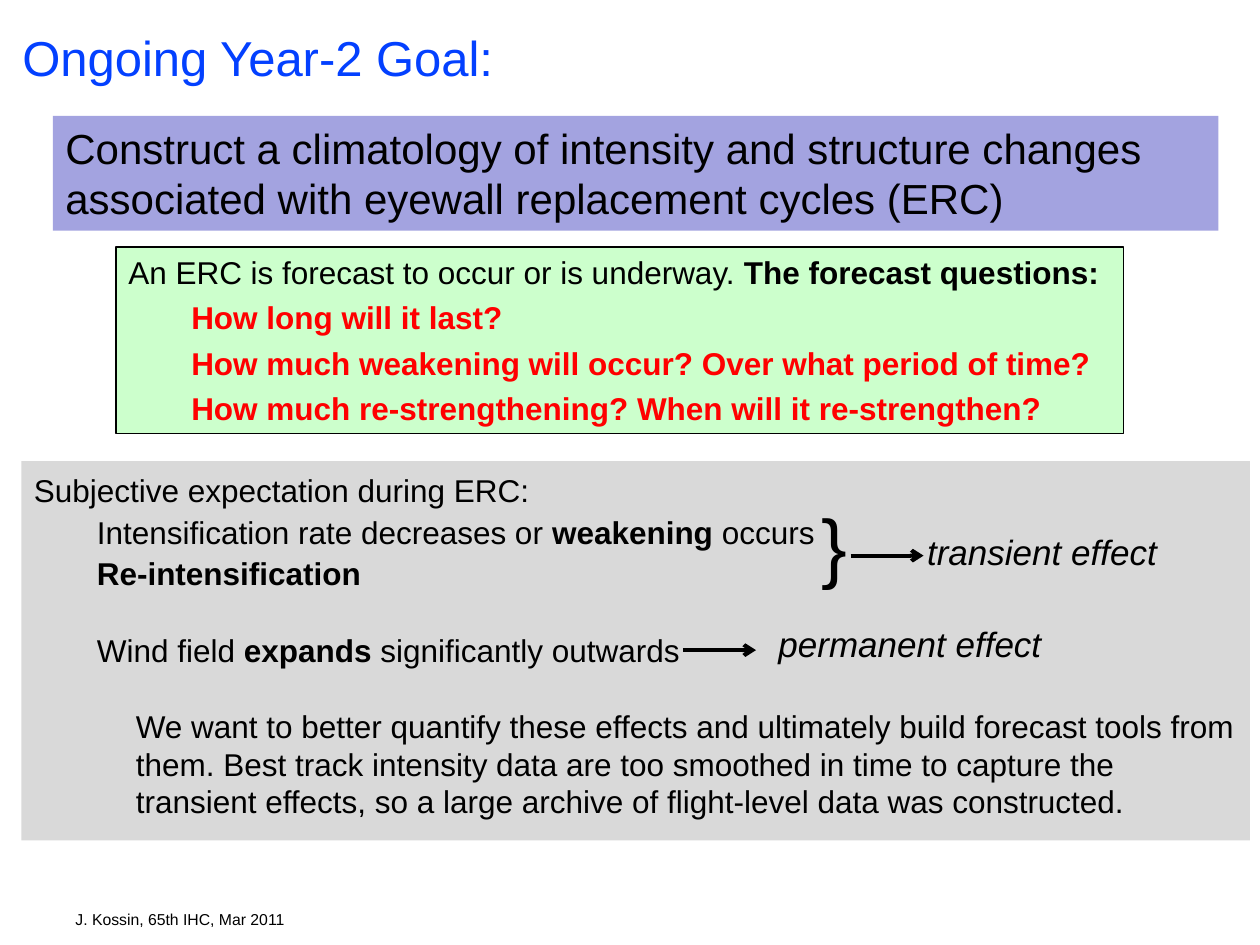
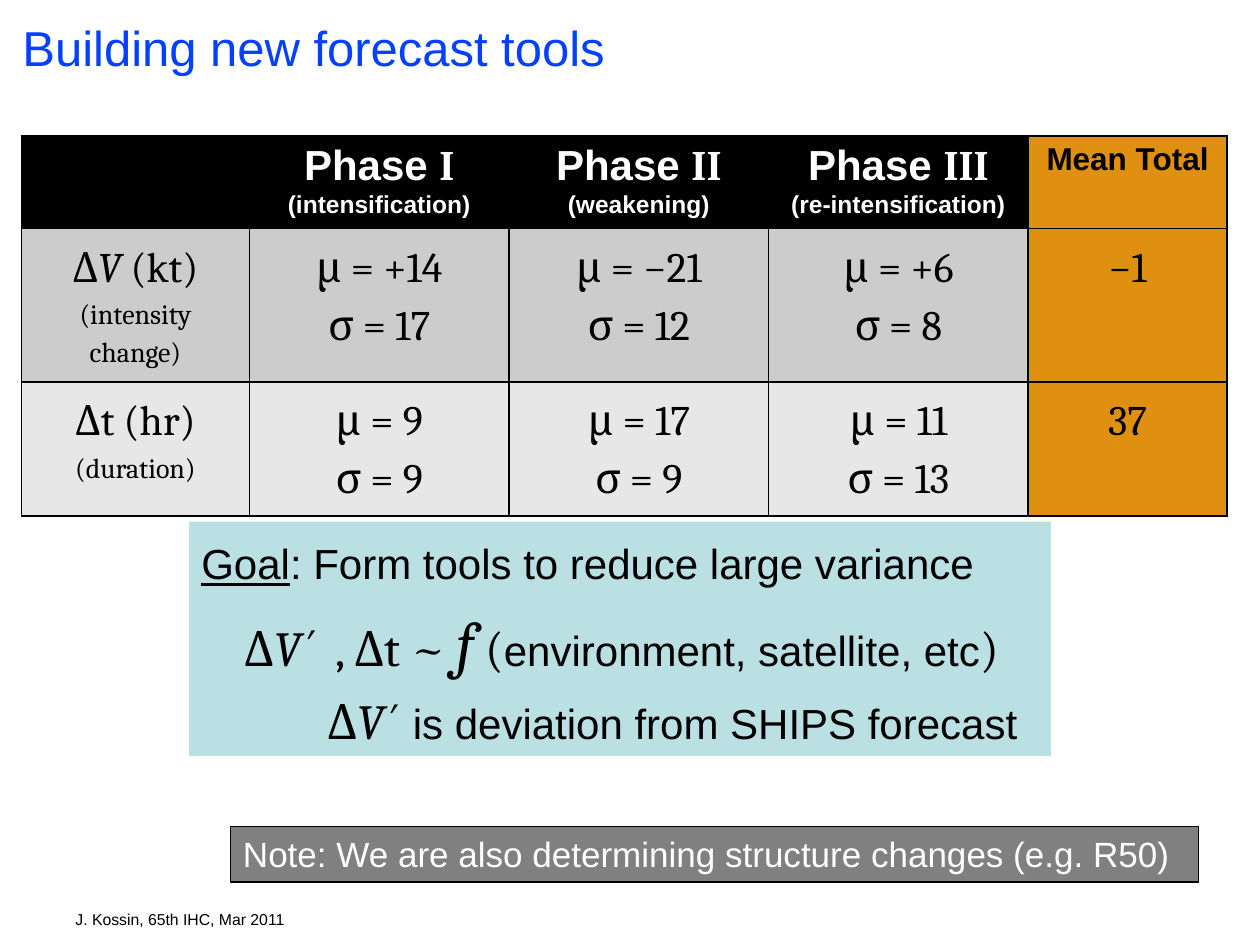
from dataclasses import dataclass

from lxml import etree
from pptx import Presentation
from pptx.dml.color import RGBColor
from pptx.enum.shapes import MSO_CONNECTOR, MSO_SHAPE
from pptx.enum.text import MSO_ANCHOR, PP_ALIGN
from pptx.oxml.ns import qn
from pptx.util import Inches, Pt

RECTANGLE = MSO_SHAPE.RECTANGLE
STRAIGHT = MSO_CONNECTOR.STRAIGHT
LEFT, CENTER = PP_ALIGN.LEFT, PP_ALIGN.CENTER
TOP = MSO_ANCHOR.TOP

BLACK, WHITE, RED = "000000", "FFFFFF", "FF0000"
TITLE_BLUE, LAVENDER, GREEN = "0340FF", "A3A3E0", "CCFFCC"
PALE_BLUE, ORANGE = "BBE0E3", "E09010"
LIGHT_GRAY, DARK_GRAY = "D9D9D9", "808080"
ROW_GRAYS = ("CCCCCC", "E7E7E7")
SANS, SERIF, MONO = "Arial", "Cambria", "Courier New"
FOOTER = "J. Kossin, 65th IHC, Mar 2011"


def rgb(color):
    return RGBColor.from_string(color)


@dataclass
class Run:
    text: str
    size: int = 18
    font: str = SANS
    color: str = BLACK
    bold: bool = False
    italic: bool = False
    underline: bool = False
    raised: bool = False


@dataclass
class Line:
    """One paragraph: its runs, left indent in inches and spacing."""
    runs: list
    indent: float = 0
    spacing: float = 1
    before: int = 0
    align: PP_ALIGN = LEFT


class Deck:
    """Holds the shared style and the slide being built."""

    def __init__(self):
        self.presentation = Presentation()
        self.presentation.slide_width = Inches(10)
        self.presentation.slide_height = Inches(7.5)
        self.slide = None

    def new_slide(self, title, title_top):
        layout = self.presentation.slide_layouts[6]
        self.slide = self.presentation.slides.add_slide(layout)
        self.text(0.5, 7.17, 1.95, 0.25, Run(FOOTER, 9))
        self.text(0.08, title_top, 9.83, 0.57, Run(title, 28, color=TITLE_BLUE))

    def add_lines(self, text_frame, lines):
        text_frame.word_wrap = True
        text_frame.vertical_anchor = TOP
        for index, line in enumerate(lines):
            paragraph = text_frame.add_paragraph() if index else text_frame.paragraphs[0]
            properties = paragraph._p.get_or_add_pPr()
            properties.set("marL", str(Inches(line.indent)))
            properties.set("indent", "0")
            paragraph.alignment = line.align
            paragraph.line_spacing = line.spacing
            paragraph.space_before = Pt(line.before)
            for item in line.runs:
                self.add_run(paragraph, item)

    def add_run(self, paragraph, item):
        run = paragraph.add_run()
        run.text = item.text
        font = run.font
        font.name, font.size = item.font, Pt(item.size)
        font.bold, font.italic = item.bold, item.italic
        font.underline = item.underline
        font.color.rgb = rgb(item.color)
        if item.raised:
            run._r.get_or_add_rPr().set("baseline", "30000")

    def text(self, left, top, width, height, run):
        shape = self.slide.shapes.add_textbox(
            Inches(left), Inches(top), Inches(width), Inches(height))
        self.add_lines(shape.text_frame, [Line([run])])

    def panel(self, left, top, width, height, fill, lines, outline=None):
        shape = self.slide.shapes.add_shape(
            RECTANGLE, Inches(left), Inches(top), Inches(width), Inches(height))
        shape.shadow.inherit = False
        shape.fill.solid()
        shape.fill.fore_color.rgb = rgb(fill)
        if outline:
            shape.line.color.rgb = rgb(outline)
            shape.line.width = Pt(0.75)
        else:
            shape.line.fill.background()
        self.add_lines(shape.text_frame, lines)

    def arrow(self, left, top, length):
        connector = self.slide.shapes.add_connector(
            STRAIGHT, Inches(left), Inches(top), Inches(left + length), Inches(top))
        connector.line.color.rgb = rgb(BLACK)
        connector.line.width = Pt(2.25)
        etree.SubElement(connector.line._get_or_add_ln(), qn("a:tailEnd"), type="arrow")
        etree.SubElement(connector._element.spPr, qn("a:effectLst"))

    def table(self, left, top, widths, heights, rows, fills):
        frame = self.slide.shapes.add_table(
            len(heights), len(widths), Inches(left), Inches(top),
            Inches(sum(widths)), Inches(sum(heights)))
        table = frame.table
        table.first_row = table.horz_banding = False
        for column, width in zip(table.columns, widths):
            column.width = Inches(width)
        for table_row, height, lines_by_cell, row_fills in zip(table.rows, heights, rows, fills):
            table_row.height = Inches(height)
            for cell, lines, fill in zip(table_row.cells, lines_by_cell, row_fills):
                self.add_lines(cell.text_frame, lines)
                self.add_borders(cell)
                cell.fill.solid()
                cell.fill.fore_color.rgb = rgb(fill)

    def add_borders(self, cell):
        properties = cell._tc.get_or_add_tcPr()
        for side in ("a:lnL", "a:lnR", "a:lnT", "a:lnB"):
            border = etree.SubElement(properties, qn(side), w=str(Pt(1)))
            fill = etree.SubElement(border, qn("a:solidFill"))
            etree.SubElement(fill, qn("a:srgbClr"), val=BLACK)


def header_cell(numeral, meaning):
    phase = [Run("Phase ", 24, color=WHITE, bold=True),
             Run(numeral, 24, SERIF, WHITE, bold=True)]
    note = [Run(f"({meaning})", 14, color=WHITE, bold=True)]
    return [Line(phase, align=CENTER), Line(note, align=CENTER)]


def value_line(*runs):
    return Line(list(runs), spacing=1.2, align=CENTER)


def serif(text, size=24, **style):
    return Run(text, size, SERIF, **style)


def statistics_cell(mean, deviation):
    return [value_line(serif(f"μ = {mean}")), value_line(serif(f"σ = {deviation}"))]


def build_goal_slide(deck):
    deck.new_slide("Ongoing Year-2 Goal:", 0.17)

    questions = ("How long will it last?",
                 "How much weakening will occur? Over what period of time?",
                 "How much re-strengthening? When will it re-strengthen?")
    lines = [Line([Run("An ERC is forecast to occur or is underway. "),
                   Run("The forecast questions:", bold=True)])]
    lines += [Line([Run(question, color=RED, bold=True)], 0.5, 1.2) for question in questions]
    deck.panel(0.92, 1.96, 8, 1.48, GREEN, lines, BLACK)

    goal = ("Construct a climatology of intensity and structure changes "
            "associated with eyewall replacement cycles (ERC)")
    deck.panel(0.42, 0.92, 9.25, 0.91, LAVENDER, [Line([Run(goal, 24)])])

    plan = ("We want to better quantify these effects and ultimately build forecast "
            "tools from them. Best track intensity data are too smoothed in time to "
            "capture the transient effects, so a large archive of flight-level data "
            "was constructed.")
    deck.panel(0.17, 3.66, 9.75, 3.01, LIGHT_GRAY, [
        Line([Run("Subjective expectation during ERC:")], spacing=1.1),
        Line([Run("Intensification rate decreases or "), Run("weakening ", bold=True),
              Run("occurs")], 0.5, 1.1),
        Line([Run("Re-intensification", bold=True)], 0.5, 1.1),
        Line([Run("Wind field "), Run("expands", bold=True),
              Run(" significantly outwards")], 0.5, before=22),
        Line([Run(plan)], 0.81, before=22),
    ])
    deck.text(7.26, 4.16, 2.07, 0.44, Run("transient effect", 20, italic=True))
    deck.text(6.42, 3.9, 0.41, 0.84, Run("}", 44))
    deck.text(6.08, 4.89, 2.33, 0.44, Run("permanent effect", 20, italic=True))
    for left, top in ((6.75, 4.41), (5.42, 5.16)):
        deck.arrow(left, top, 0.58)


def build_tools_slide(deck):
    deck.new_slide("Building new forecast tools", 0.09)

    delta_v = [serif("Δ", 28), serif("V", 28, italic=True),
               Run("’", 28, MONO, italic=True, raised=True)]
    deck.panel(1.5, 4.14, 6.84, 1.86, PALE_BLUE, [
        Line([Run("Goal", 24, underline=True),
              Run(": Form tools to reduce large variance", 24)], spacing=1.2),
        Line([*delta_v, Run(" ", 28, MONO, italic=True, raised=True),
              serif(", Δt ~ ", 28), serif("f", 36, italic=True), serif(" (", 28),
              Run("environment, satellite, etc", 24), serif(")", 28)], 0.34, 1.2),
        Line([*delta_v, Run(" is deviation from SHIPS forecast", 24)], 1, 1.2),
    ])

    header = [[], header_cell("I", "intensification"), header_cell("II", "weakening"),
              header_cell("III", "re-intensification"),
              [Line([Run("Mean Total", bold=True)], align=CENTER)]]
    intensity = [
        [value_line(serif("Δ"), serif("V", italic=True), serif(" (kt)")),
         value_line(serif("(intensity change)", 16))],
        statistics_cell("+14", 17), statistics_cell("−21", 12), statistics_cell("+6", 8),
        [value_line(serif("−1"))]]
    duration = [
        [value_line(serif("Δt (hr)")), value_line(serif("(duration)", 16))],
        statistics_cell(9, 9), statistics_cell(17, 9), statistics_cell(11, 13),
        [value_line(serif("37"))]]
    fills = [[color] * 4 + [ORANGE] for color in (BLACK, *ROW_GRAYS)]
    deck.table(0.17, 1.08, [1.81, 2.06, 2.06, 2.06, 1.58], [0.73, 1.22, 1.06],
               [header, intensity, duration], fills)

    note = "Note: We are also determining structure changes (e.g. R50)"
    deck.panel(1.83, 6.56, 7.68, 0.44, DARK_GRAY, [Line([Run(note, 20, color=WHITE)])], BLACK)


def main():
    deck = Deck()
    build_goal_slide(deck)
    build_tools_slide(deck)
    deck.presentation.save("out.pptx")


if __name__ == "__main__":
    main()
